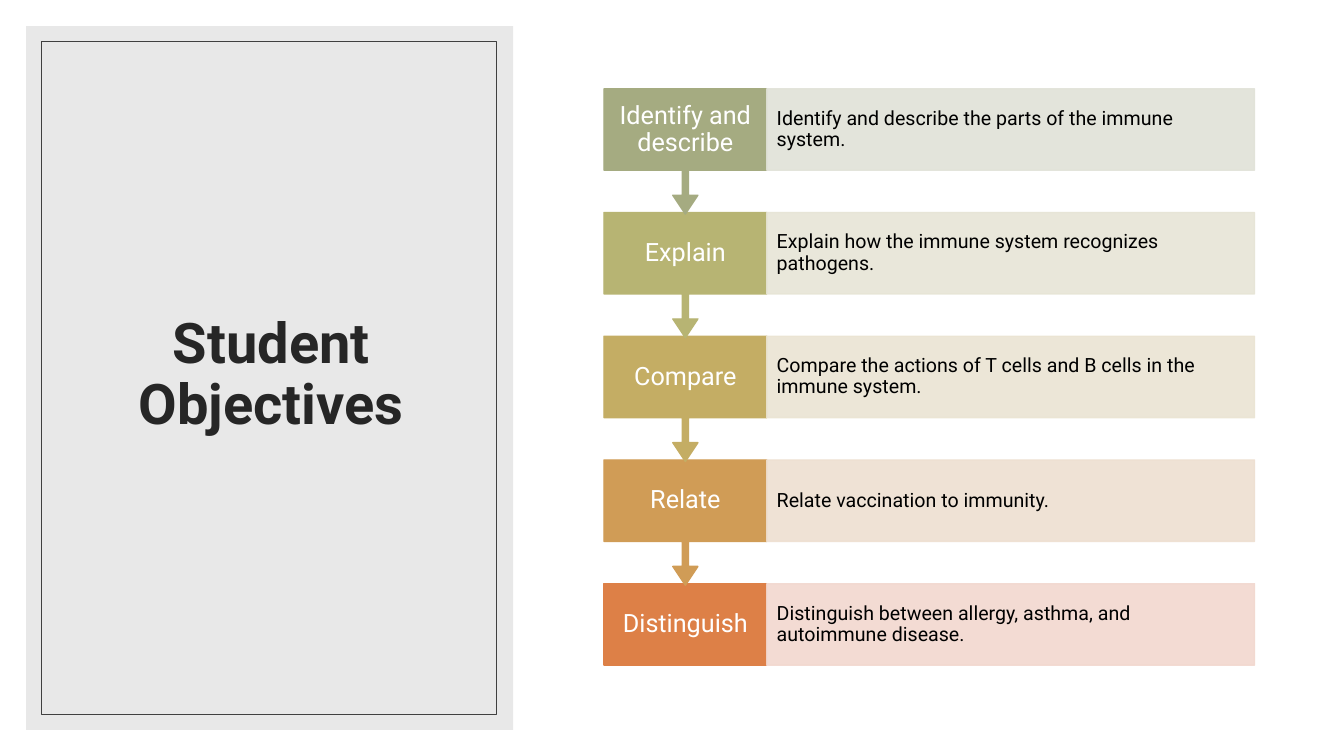
"""Build the Student Objectives slide: a title panel beside a chain of five steps."""
from lxml.etree import SubElement
from pptx import Presentation
from pptx.dml.color import RGBColor
from pptx.enum.shapes import MSO_SHAPE as Preset
from pptx.enum.text import MSO_ANCHOR as Anchor, PP_ALIGN as Align
from pptx.oxml.ns import qn
from pptx.util import Pt

TITLE = "Student Objectives"
OBJECTIVES = [
    ("Identify and describe", "Identify and describe the parts of the immune system.", "A5AB81", "E1E2D8"),
    ("Explain", "Explain how the immune system recognizes pathogens.", "B7B473", "E7E5D6"),
    ("Compare", "Compare the actions of T cells and B cells in the immune system.", "C4AD64", "EBE4D3"),
    ("Relate", "Relate vaccination to immunity.", "D09C56", "EEDFD1"),
    ("Distinguish", "Distinguish between allergy, asthma, and autoimmune disease.", "DD8047", "F2D8CF"),
]

THEME = {
    "panel": "D9D9D9",
    "frame": "404040",
    "title": {"name": "Roboto", "size": Pt(40), "bold": True, "color": "262626"},
    "step": {"name": "Roboto", "size": Pt(18), "color": "FFFFFF"},
    "detail": {"name": "Roboto", "size": Pt(14), "color": "000000"},
}

SLIDE_SIZE = (960, 540)
PANEL = (18.7, 18.7, 347.8, 502.6)
FRAME = (29.5, 29.5, 324.7, 481)
TITLE_AREA = (45.4, 43.9, 296.6, 449.3)
STEP_LEFT, STEP_TOP, STEP_WIDTH, STEP_HEIGHT = 431.4, 63.4, 116.3, 58.2
PITCH, DETAIL_WIDTH = 88.38, 348.4
CALLOUT_HEIGHT = 89.5
CALLOUT_ADJUSTMENTS = (0.05, 0.1, 0.15, 0.65)
STEP_INSETS = (7.9, 10.1)
DETAIL_INSETS = (7.2, 13.7)


def paint(color_fill, color, opacity):
    """Make a fill solid with the given opacity in percent."""
    color_fill.solid()
    color_fill.fore_color.rgb = RGBColor.from_string(color)
    if opacity < 100:
        srgb = color_fill._xPr.find(".//" + qn("a:srgbClr"))
        SubElement(srgb, qn("a:alpha"), val=str(opacity * 1000))


def add_block(slide, preset, area, fill=None, line=None, width=1, opacity=100):
    """Add a flat preset shape."""
    block = slide.shapes.add_shape(preset, *map(Pt, area))
    block.shadow.inherit = False
    if fill:
        paint(block.fill, fill, opacity)
    else:
        block.fill.background()
    if line:
        paint(block.line.fill, line, opacity)
        block.line.width = Pt(width)
    else:
        block.line.fill.background()
    return block


def write(holder, wording, style, align, insets=(7.2, 3.6)):
    """Write one vertically centred paragraph in a shape."""
    frame = holder.text_frame
    across, down = map(Pt, insets)
    layout = {"word_wrap": True, "vertical_anchor": Anchor.MIDDLE,
              "margin_left": across, "margin_right": across,
              "margin_top": down, "margin_bottom": down}
    for key, value in layout.items():
        setattr(frame, key, value)
    paragraph = frame.paragraphs[0]
    paragraph.alignment = align
    paragraph.line_spacing = 0.9
    run = paragraph.add_run()
    run.text = wording
    for key, value in style.items():
        if key == "color":
            run.font.color.rgb = RGBColor.from_string(value)
        else:
            setattr(run.font, key, value)


def add_objective(slide, index):
    """Add one step with its description, and an arrow to the step below."""
    name, description, strong, pale = OBJECTIVES[index]
    top = STEP_TOP + index * PITCH
    last = index == len(OBJECTIVES) - 1
    preset = Preset.RECTANGLE if last else Preset.DOWN_ARROW_CALLOUT
    height = STEP_HEIGHT if last else CALLOUT_HEIGHT
    step = add_block(slide, preset, (STEP_LEFT, top, STEP_WIDTH, height), strong, strong)
    if not last:
        for position, value in enumerate(CALLOUT_ADJUSTMENTS):
            step.adjustments[position] = value
    write(step, name, THEME["step"], Align.CENTER, STEP_INSETS)
    detail_area = (STEP_LEFT + STEP_WIDTH, top, DETAIL_WIDTH, STEP_HEIGHT)
    detail = add_block(slide, Preset.RECTANGLE, detail_area, pale, pale, opacity=90)
    write(detail, description, THEME["detail"], Align.LEFT, DETAIL_INSETS)


def main():
    """Create and save the slide."""
    deck = Presentation()
    deck.slide_width, deck.slide_height = map(Pt, SLIDE_SIZE)
    slide = deck.slides.add_slide(deck.slide_layouts[6])
    add_block(slide, Preset.RECTANGLE, PANEL, THEME["panel"], opacity=60)
    title = slide.shapes.add_textbox(*map(Pt, TITLE_AREA))
    write(title, TITLE, THEME["title"], Align.CENTER)
    add_block(slide, Preset.RECTANGLE, FRAME, line=THEME["frame"], width=0.5)
    for index in reversed(range(len(OBJECTIVES))):
        add_objective(slide, index)
    deck.save("out.pptx")


if __name__ == "__main__":
    main()
